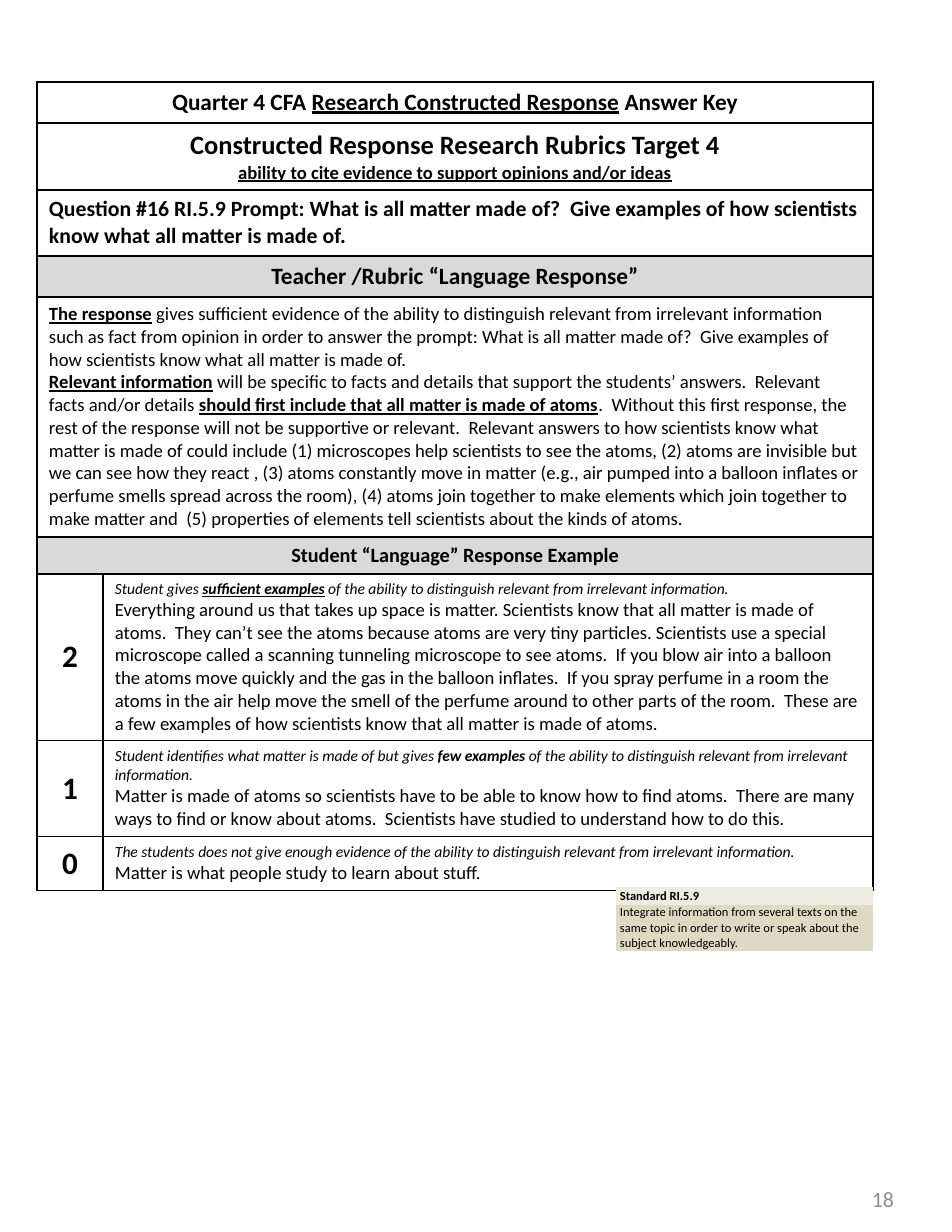
from dataclasses import dataclass

import pptx
import pptx.dml.color
import pptx.enum.text
import pptx.oxml.ns
import pptx.util
from lxml import etree

EMU_PER_PX = 914400 / 112
ALIGN = pptx.enum.text.PP_ALIGN
ANCHOR = pptx.enum.text.MSO_ANCHOR


@dataclass(frozen=True)
class Theme:
    font: str = "Calibri"
    ink: str = "000000"
    page_grey: str = "8C8C8C"
    band: str = "D9D9D9"
    standard_head: str = "EEECE1"
    standard_body: str = "DDD9C3"
    border_pt: int = 1
    title: int = 17
    heading: int = 15
    prompt: int = 14
    subheading: int = 13
    body: int = 12
    note: int = 10
    small: int = 8
    score: int = 20


THEME = Theme()


@dataclass(frozen=True)
class Run:
    text: str
    bold: bool = False
    underline: bool = False
    italic: bool = False


@dataclass(frozen=True)
class Paragraph:
    runs: list[Run]
    size: int
    align: ALIGN = ALIGN.LEFT
    hanging: int = 0
    color: str = THEME.ink


@dataclass(frozen=True)
class Cell:
    paragraphs: list[Paragraph]
    fill: str | None = None
    anchor: ANCHOR = ANCHOR.TOP


@dataclass(frozen=True)
class Row:
    height: int
    cells: list[Cell]


@dataclass(frozen=True)
class Grid:
    left: int
    top: int
    columns: list[int]
    rows: list[Row]
    margins: tuple[int, int]
    border: str | None


def px(length: int) -> pptx.util.Emu:
    return pptx.util.Emu(round(length * EMU_PER_PX))


def rgb(color: str) -> pptx.dml.color.RGBColor:
    return pptx.dml.color.RGBColor.from_string(color)


def write_paragraphs(text_frame, paragraphs: list[Paragraph]) -> None:
    for index, content in enumerate(paragraphs):
        paragraph = text_frame.add_paragraph() if index else text_frame.paragraphs[0]
        paragraph.alignment = content.align
        if content.hanging:
            properties = paragraph._p.get_or_add_pPr()
            properties.set("marL", str(px(content.hanging)))
            properties.set("indent", str(-px(content.hanging)))
        for part in content.runs:
            run = paragraph.add_run()
            run.text = part.text
            run.font.name = THEME.font
            run.font.size = pptx.util.Pt(content.size)
            run.font.bold = part.bold
            run.font.underline = part.underline
            run.font.italic = part.italic
            run.font.color.rgb = rgb(content.color)


def set_borders(cell, color: str | None) -> None:
    qn = pptx.oxml.ns.qn
    properties = cell._tc.get_or_add_tcPr()
    for side in ("lnL", "lnR", "lnT", "lnB"):
        line = etree.SubElement(properties, qn(f"a:{side}"))
        if color is None:
            etree.SubElement(line, qn("a:noFill"))
        else:
            line.set("w", str(pptx.util.Pt(THEME.border_pt)))
            fill = etree.SubElement(line, qn("a:solidFill"))
            etree.SubElement(fill, qn("a:srgbClr")).set("val", color)


def draw_grid(slide, grid: Grid) -> None:
    """Draw a table; a row with a single cell spans all columns."""
    height = sum(row.height for row in grid.rows)
    table = slide.shapes.add_table(
        len(grid.rows), len(grid.columns),
        px(grid.left), px(grid.top), px(sum(grid.columns)), px(height)).table
    table.first_row = table.horz_banding = False
    for column, width in zip(table.columns, grid.columns):
        column.width = px(width)
    last = len(grid.columns) - 1
    for row_index, row in enumerate(grid.rows):
        table.rows[row_index].height = px(row.height)
        for column_index in range(last + 1):
            cell = table.cell(row_index, column_index)
            set_borders(cell, grid.border)
            cell.fill.background()
        if len(row.cells) == 1 and last:
            table.cell(row_index, 0).merge(table.cell(row_index, last))
        for column_index, content in enumerate(row.cells):
            cell = table.cell(row_index, column_index)
            cell.margin_left = cell.margin_right = px(grid.margins[0])
            cell.margin_top = cell.margin_bottom = px(grid.margins[1])
            cell.vertical_anchor = content.anchor
            if content.fill:
                cell.fill.solid()
                cell.fill.fore_color.rgb = rgb(content.fill)
            write_paragraphs(cell.text_frame, content.paragraphs)


def centred(size: int, *runs: Run) -> Paragraph:
    return Paragraph(list(runs), size, ALIGN.CENTER)


def score_row(height: int, score: str, criterion: list[Run], answer: str) -> Row:
    return Row(height, [
        Cell([centred(THEME.score, Run(score, bold=True))], anchor=ANCHOR.MIDDLE),
        Cell([Paragraph(criterion, THEME.note), Paragraph([Run(answer)], THEME.body)])])


def draw_page_number(slide, number: str) -> None:
    text_frame = slide.shapes.add_textbox(px(803), px(1166), px(103), px(66)).text_frame
    text_frame.word_wrap = True
    text_frame.vertical_anchor = ANCHOR.MIDDLE
    text_frame.margin_left = text_frame.margin_right = px(12)
    write_paragraphs(text_frame, [
        Paragraph([Run(number)], THEME.prompt, ALIGN.RIGHT, color=THEME.page_grey)])


RUBRIC = Grid(37, 82, [66, 770], [
    Row(41, [Cell([centred(THEME.heading, Run("Quarter 4 CFA ", True),
                           Run("Research Constructed Response", True, True),
                           Run(" Answer Key", True))])]),
    Row(67, [Cell([
        centred(THEME.title, Run("Constructed Response Research Rubrics Target 4", True)),
        centred(THEME.body, Run("ability to cite evidence to support opinions and/or ideas", True, True))])]),
    Row(66, [Cell([Paragraph([Run(line, True)], THEME.prompt, hanging=35) for line in (
        "Question #16 RI.5.9 Prompt: What is all matter made of?  Give examples of how scientists",
        "know what all matter is made of.")])]),
    Row(41, [Cell([centred(THEME.heading, Run("Teacher /Rubric “Language Response”", True))], THEME.band)]),
    Row(240, [Cell([
        Paragraph([
            Run("The response", True, True),
            Run(" gives sufficient evidence of the ability to distinguish relevant from irrelevant information such as fact from opinion in order to answer the prompt: What is all matter made of?  Give examples of how scientists know what all matter is made of.")], THEME.body),
        Paragraph([
            Run("Relevant information", True, True),
            Run(" will be specific to facts and details that support the students’ answers.  Relevant facts and/or details "),
            Run("should first include that all matter is made of atoms", True, True),
            Run(".  Without this first response, the rest of the response will not be supportive or relevant.  Relevant answers to how scientists know what matter is made of could include (1) microscopes help scientists to see the atoms, (2) atoms are invisible but we can see how they react , (3) atoms constantly move in matter (e.g., air pumped into a balloon inflates or perfume smells spread across the room), (4) atoms join together to make elements which join together to make matter and  (5) properties of elements tell scientists about the kinds of atoms.")], THEME.body)])]),
    Row(37, [Cell([centred(THEME.subheading, Run("Student “Language” Response Example", True))], THEME.band)]),
    score_row(167, "2", [
        Run("Student gives ", italic=True), Run("sufficient examples", True, True, True),
        Run(" of the ability to distinguish relevant from irrelevant information.", italic=True)],
        "Everything around us that takes up space is matter. Scientists know that all matter is made of atoms.  They can’t see the atoms because atoms are very tiny particles. Scientists use a special microscope called a scanning tunneling microscope to see atoms.  If you blow air into a balloon the atoms move quickly and the gas in the balloon inflates.  If you spray perfume in a room the atoms in the air help move the smell of the perfume around to other parts of the room.  These are a few examples of how scientists know that all matter is made of atoms."),
    score_row(96, "1", [
        Run("Student identifies what matter is made of but gives ", italic=True),
        Run("few examples ", bold=True, italic=True),
        Run("of the ability to distinguish relevant from irrelevant information.", italic=True)],
        "Matter is made of atoms so scientists have to be able to know how to find atoms.  There are many ways to find or know about atoms.  Scientists have studied to understand how to do this."),
    score_row(54, "0", [
        Run("The students does not give enough evidence of the ability to distinguish relevant from irrelevant information.", italic=True)],
        "Matter is what people study to learn about stuff."),
], (12, 6), THEME.ink)

STANDARD = Grid(616, 887, [257], [
    Row(18, [Cell([Paragraph([Run("Standard RI.5.9", True)], THEME.small)],
                  THEME.standard_head, ANCHOR.MIDDLE)]),
    Row(46, [Cell([Paragraph([Run("Integrate information from several texts on the same topic in order to write or speak about the subject knowledgeably.")], THEME.small)],
                  THEME.standard_body)]),
], (4, 0), None)


def main() -> None:
    presentation = pptx.Presentation()
    presentation.slide_width, presentation.slide_height = px(952), px(1232)
    slide = presentation.slides.add_slide(presentation.slide_layouts[6])
    draw_page_number(slide, "18")
    for grid in (RUBRIC, STANDARD):
        draw_grid(slide, grid)
    presentation.save("out.pptx")


if __name__ == "__main__":
    main()
